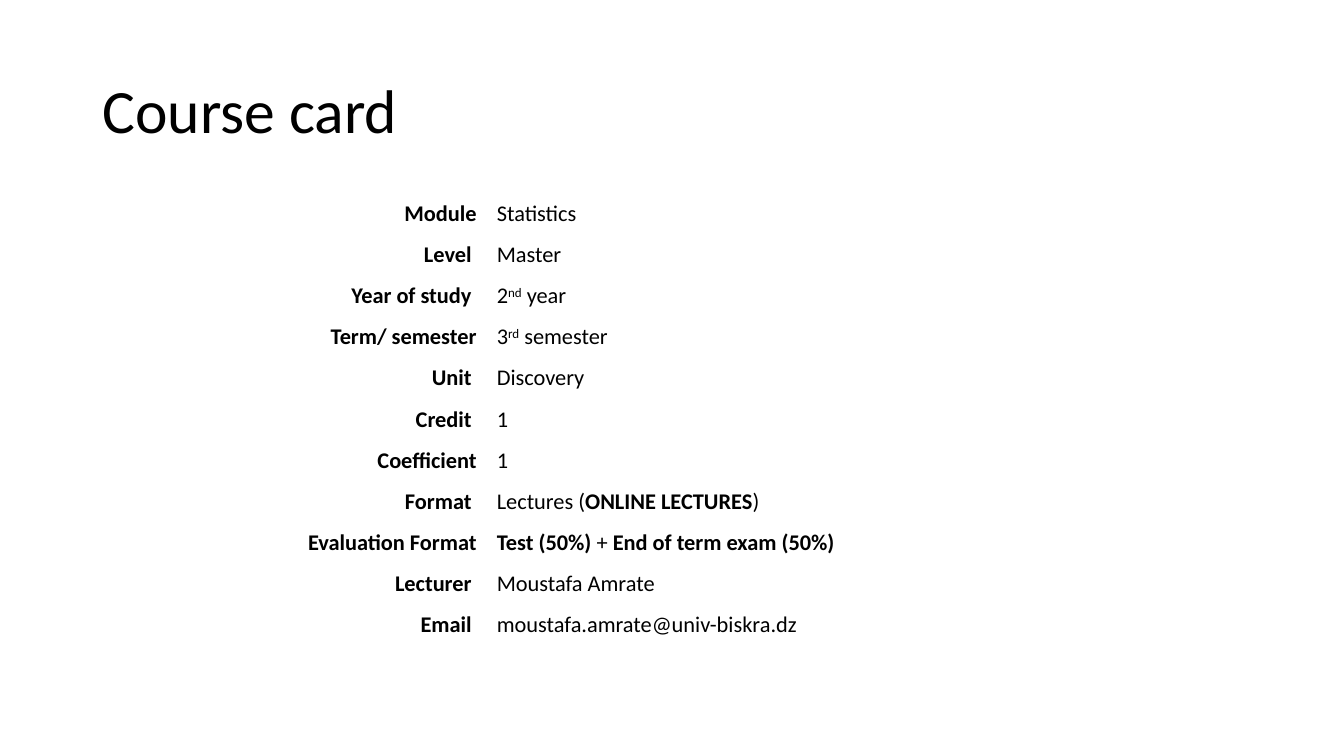
from dataclasses import dataclass

from pptx import Presentation
from pptx import util as u
from pptx.dml.color import RGBColor
from pptx.enum import text


@dataclass(frozen=True)
class Theme:
    """Colours, font and type sizes of the slide."""
    font: str = "Calibri"
    ink: RGBColor = RGBColor(0, 0, 0)
    title_size: int = 44
    body_size: int = 16


THEME = Theme()
PLAIN, BOLD, SUPER = "plain", "bold", "super"
COURSE = [
    ("Module", [("Statistics", PLAIN)]),
    ("Level ", [("Master", PLAIN)]),
    ("Year of study ", [("2", PLAIN), ("nd", SUPER), (" year", PLAIN)]),
    ("Term/ semester", [("3", PLAIN), ("rd", SUPER), (" semester", PLAIN)]),
    ("Unit ", [("Discovery", PLAIN)]),
    ("Credit ", [("1", PLAIN)]),
    ("Coefficient", [("1", PLAIN)]),
    ("Format ", [("Lectures (", PLAIN), ("ONLINE LECTURES", BOLD), (")", PLAIN)]),
    ("Evaluation Format", [("Test (50%) ", BOLD), ("+ ", PLAIN),
                           ("End of term exam (50%)", BOLD)]),
    ("Lecturer ", [("Moustafa Amrate", PLAIN)]),
    ("Email ", [("moustafa.amrate@univ-biskra.dz", PLAIN)]),
]


def add_run(p, words, size, style=PLAIN):
    """Add one run in the theme font."""
    r = p.add_run()
    r.text = words
    r.font.name = THEME.font
    r.font.size = u.Pt(size)
    r.font.color.rgb = THEME.ink
    r.font.bold = style == BOLD
    if style == SUPER:
        r._r.get_or_add_rPr().set("baseline", "30000")


def place_title(slide, words, left, top, width, height):
    """Move the title placeholder into its box and fill it."""
    sp = slide.shapes.title
    sp.left, sp.top, sp.width, sp.height = map(u.Pt, (left, top, width, height))
    tf = sp.text_frame
    tf.word_wrap = True
    tf.auto_size = text.MSO_AUTO_SIZE.NONE
    tf.vertical_anchor = text.MSO_ANCHOR.MIDDLE
    p = tf.paragraphs[0]
    p.alignment = text.PP_ALIGN.LEFT
    p.line_spacing = 0.9
    add_run(p, words, THEME.title_size)


def fill_cell(cell, runs, align):
    """Write runs into an unfilled cell."""
    cell.fill.background()
    cell.margin_left = cell.margin_right = u.Pt(7.2)
    cell.margin_top = cell.margin_bottom = u.Pt(0)
    p = cell.text_frame.paragraphs[0]
    p.alignment = align
    p.line_spacing = 1.5
    for words, style in runs:
        add_run(p, words, THEME.body_size, style)


def add_course_table(slide, rows, left, top, width, height, label_width):
    """Place the two-column table of labels and values."""
    box = map(u.Pt, (left, top, width, height))
    table = slide.shapes.add_table(len(rows), 2, *box).table
    table.first_row = table.horz_banding = False
    table.columns[0].width = u.Pt(label_width)
    table.columns[1].width = u.Pt(width - label_width)
    for i, (label, value) in enumerate(rows):
        table.rows[i].height = u.Pt(height / len(rows))
        fill_cell(table.cell(i, 0), [(label, BOLD)], text.PP_ALIGN.RIGHT)
        fill_cell(table.cell(i, 1), value, text.PP_ALIGN.LEFT)


def main():
    """Build and save the course card."""
    prs = Presentation()
    prs.slide_width, prs.slide_height = u.Pt(960), u.Pt(540)
    slide = prs.slides.add_slide(prs.slide_layouts[5])
    place_title(slide, "Course card", 66, 28.75, 828, 104.4)
    add_course_table(slide, COURSE, 142.5, 133.2, 674.6, 288.75, 205.2)
    prs.save("out.pptx")


if __name__ == "__main__":
    main()
